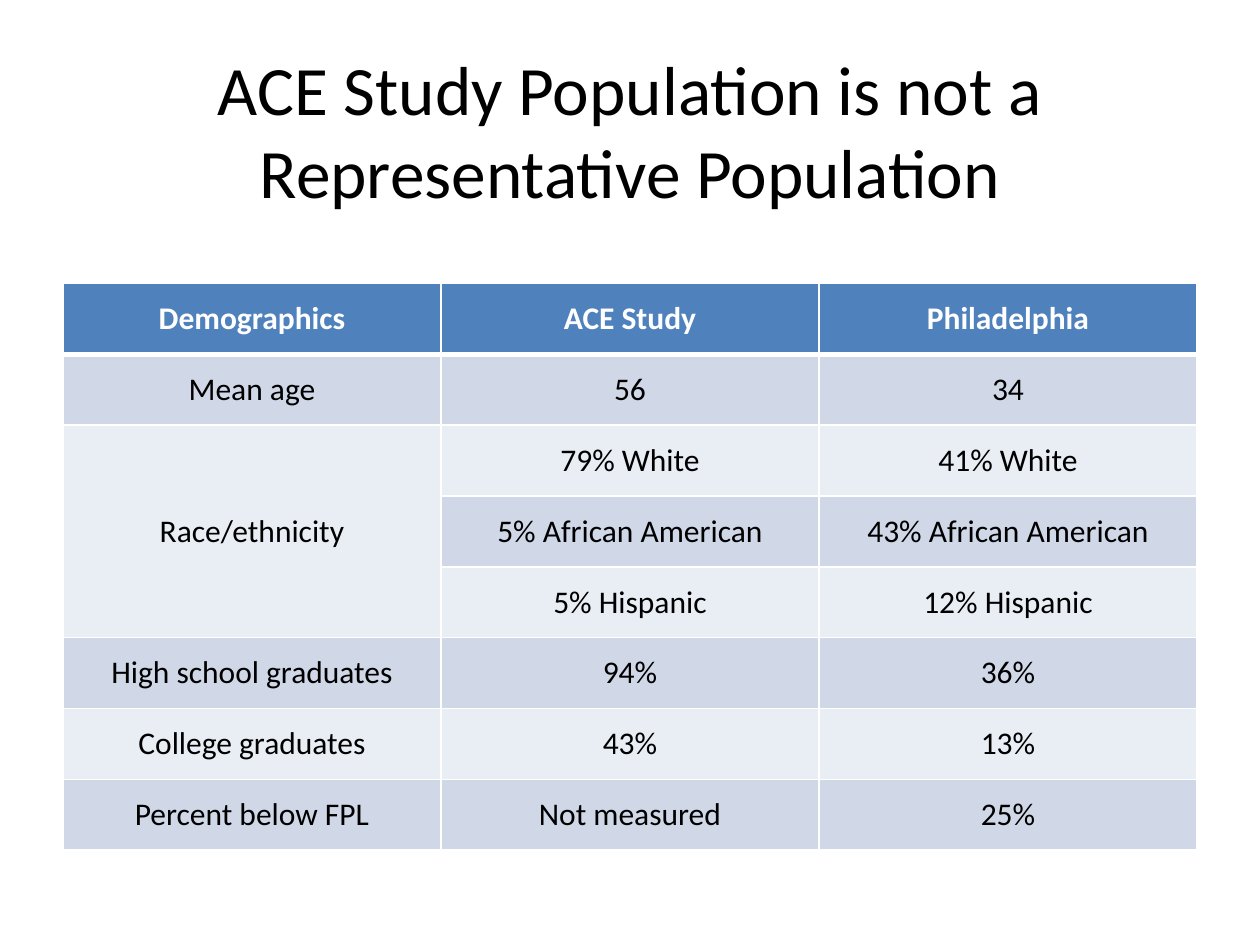
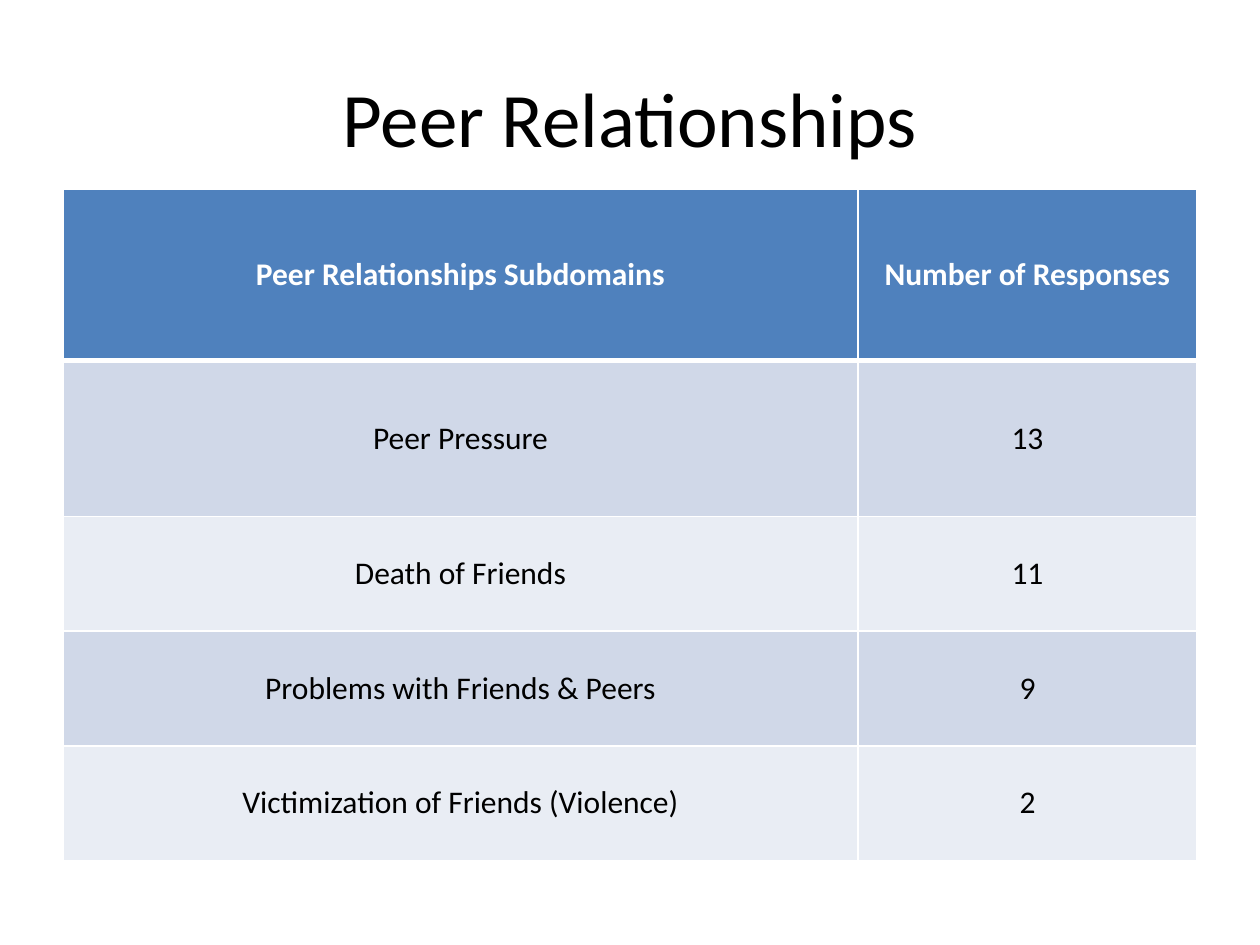
from lxml.etree import SubElement
from pptx import Presentation
from pptx.dml.color import RGBColor
from pptx.enum.text import MSO_ANCHOR, PP_ALIGN
from pptx.oxml.ns import qn
from pptx.util import Inches, Pt

BLUE = RGBColor(0x4F, 0x81, 0xBD)
BAND = RGBColor(0xD0, 0xD8, 0xE8)
PALE = RGBColor(0xE9, 0xED, 0xF4)
WHITE = RGBColor(0xFF, 0xFF, 0xFF)
BLACK = RGBColor(0, 0, 0)
FONT = "Calibri"

deck = Presentation()
deck.slide_width, deck.slide_height = Inches(10), Inches(7.5)
LEFT = deck.slide_width // 20
WIDTH = deck.slide_width - 2 * LEFT

SLIDES = [
    dict(
        title="ACE Study Population is not a Representative Population",
        size=39.6, height=1.45, top=2.25,
        cols=[3] * 3, rows=[4.5 / 8] * 8,
        cells=[
            ["Demographics", "ACE Study", "Philadelphia"],
            ["Mean age", "56", "34"],
            ["Race/ethnicity", "79% White", "41% White"],
            ["", "5% African American", "43% African American"],
            ["", "5% Hispanic", "12% Hispanic"],
            ["High school graduates", "94%", "36%"],
            ["College graduates", "43%", "13%"],
            ["Percent below FPL", "Not measured", "25%"],
        ],
        merge=((2, 0), (4, 0)),
    ),
    dict(
        title="Peer Relationships",
        size=44, height=1.25, top=1.5,
        cols=[6.31, 2.69], rows=[1.36, 1.24] + [0.91] * 3,
        cells=[
            ["Peer Relationships Subdomains", "Number of Responses"],
            ["Peer Pressure", "13"],
            ["Death of Friends", "11"],
            ["Problems with Friends & Peers", "9"],
            ["Victimization of Friends (Violence)", "2"],
        ],
        merge=None,
    ),
]


def write(para, text, size, color, bold=False):
    para.text = text
    para.alignment = PP_ALIGN.CENTER
    font = para.font
    font.name, font.size, font.bold = FONT, Pt(size), bold
    font.color.rgb = color


def rule(cell, row):
    """Draw white cell borders, with a thick line below the header row."""
    thick = {(0, "lnB"), (1, "lnT")}
    props = cell._tc.get_or_add_tcPr()
    for side in ("lnL", "lnR", "lnT", "lnB"):
        line = SubElement(props, qn(f"a:{side}"))
        line.set("w", str(Pt(3 if (row, side) in thick else 1)))
        fill = SubElement(line, qn("a:solidFill"))
        SubElement(fill, qn("a:srgbClr")).set("val", str(WHITE))


for data in SLIDES:
    slide = deck.slides.add_slide(deck.slide_layouts[6])
    box = slide.shapes.add_textbox(LEFT, Inches(0.3), WIDTH, Inches(data["height"]))
    frame = box.text_frame
    frame.word_wrap = True
    frame.vertical_anchor = MSO_ANCHOR.MIDDLE
    write(frame.paragraphs[0], data["title"], data["size"], BLACK)

    rows, cols = data["rows"], data["cols"]
    table = slide.shapes.add_table(
        len(rows), len(cols), LEFT, Inches(data["top"]), WIDTH, Inches(sum(rows))
    ).table
    for col, width in zip(table.columns, cols):
        col.width = Inches(width)
    for row, height in zip(table.rows, rows):
        row.height = Inches(height)

    for r, texts in enumerate(data["cells"]):
        head = r == 0
        for c, text in enumerate(texts):
            cell = table.cell(r, c)
            cell.vertical_anchor = MSO_ANCHOR.MIDDLE
            rule(cell, r)
            cell.fill.solid()
            cell.fill.fore_color.rgb = BLUE if head else BAND if r % 2 else PALE
            write(cell.text_frame.paragraphs[0], text, 18, WHITE if head else BLACK, head)

    if data["merge"]:
        first, last = data["merge"]
        table.cell(*first).merge(table.cell(*last))

deck.save("out.pptx")
